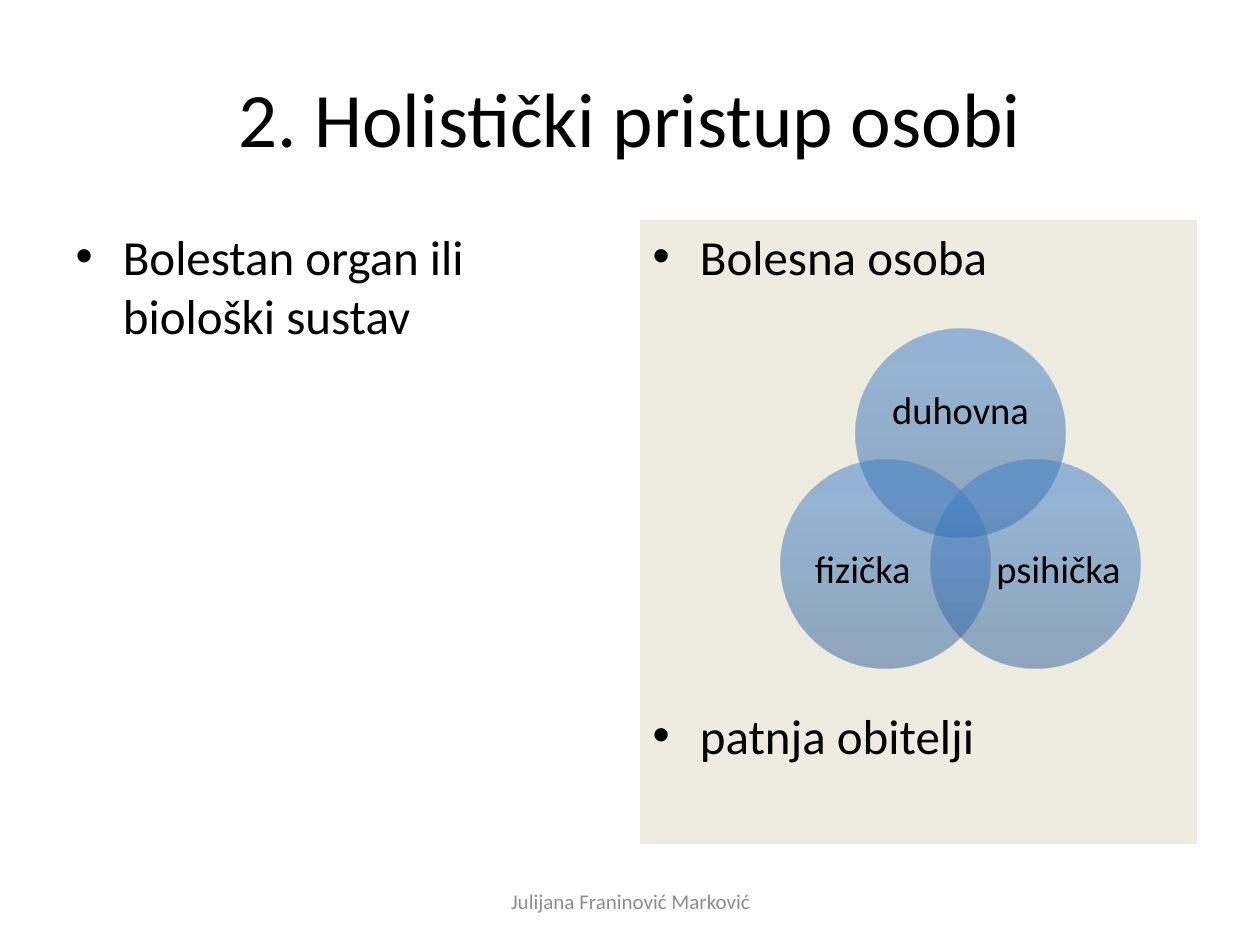
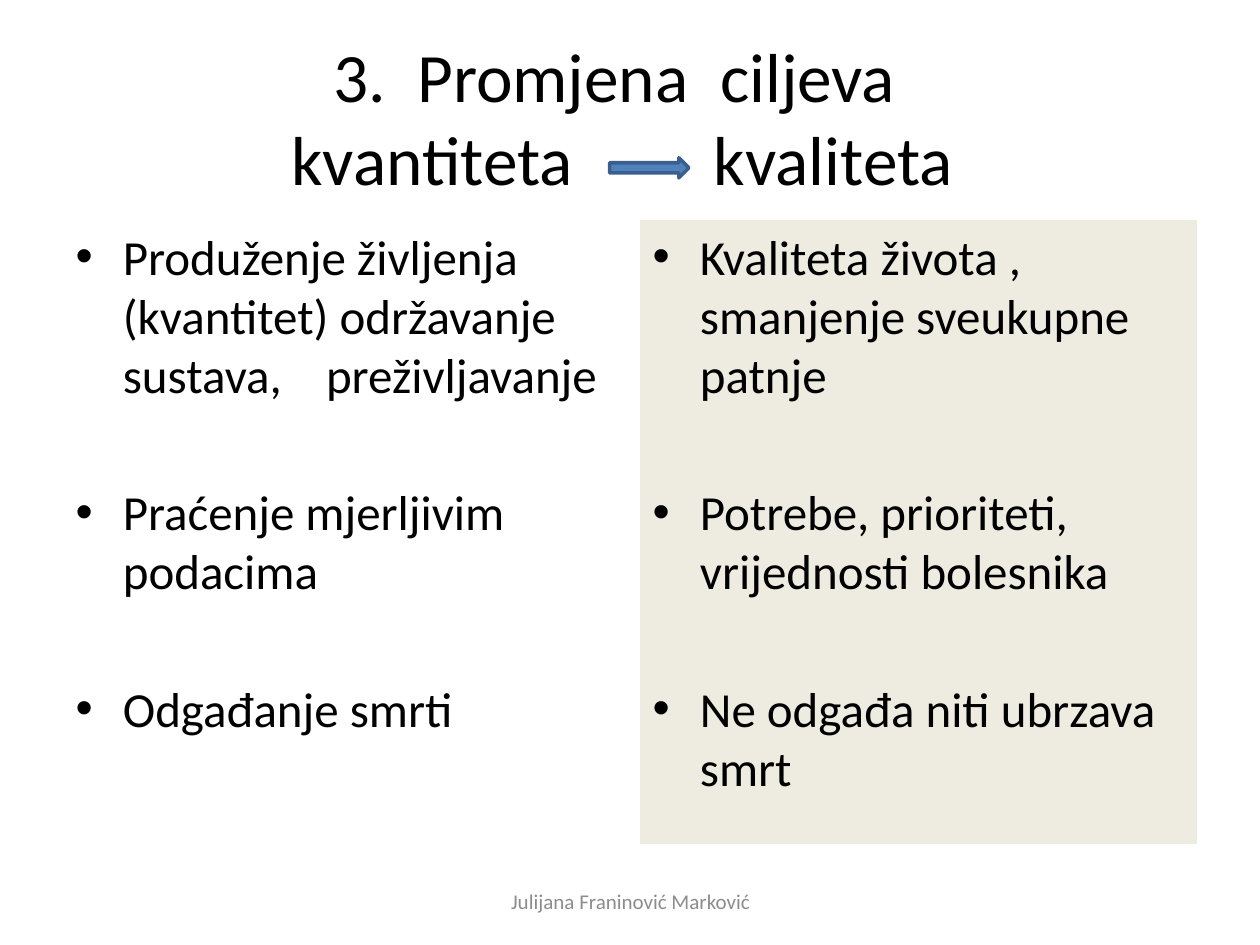
from dataclasses import dataclass

from lxml import etree
from pptx import Presentation
from pptx import util as u
from pptx.dml.color import RGBColor
from pptx.enum import shapes, text
from pptx.oxml import ns

FONT = "Calibri"
BLACK = RGBColor(0x00, 0x00, 0x00)
WHITE = RGBColor(0xFF, 0xFF, 0xFF)
GREY = RGBColor(0x8C, 0x8C, 0x8C)
PANEL = RGBColor(0xEE, 0xEC, 0xE1)
ARROW_FILL = RGBColor(0x4F, 0x81, 0xBD)
ARROW_LINE = RGBColor(0x3A, 0x5F, 0x8C)
CIRCLE_STOPS = (
    (0, RGBColor(0x2F, 0x5F, 0x99)),
    (80, RGBColor(0x3D, 0x7C, 0xC7)),
    (100, RGBColor(0x3A, 0x7C, 0xCB)),
)
SPACE_WIDTH = 0.226  # width of a space, as a share of the font size
BODY_SIZE = 28
BULLET_GAP = 45  # points between bullets that stand apart


@dataclass
class Box:
    left: float
    top: float
    width: float
    height: float

    def share(self, x, y, width, height):
        """Box inside this one, given as shares of its size."""
        return Box(self.left + x * self.width, self.top + y * self.height,
                   width * self.width, height * self.height)

    def emu(self):
        return [u.Inches(n) for n in (self.left, self.top, self.width, self.height)]


SLIDE = Box(0, 0, 10, 7.5)
TITLE = SLIDE.share(0.05, 0.04, 0.9, 0.167)
LEFT = SLIDE.share(0.05, 0.233, 0.442, 0.66)
RIGHT = SLIDE.share(0.508, 0.233, 0.442, 0.66)
FOOTER = SLIDE.share(0.342, 0.927, 0.317, 0.053)


def add_span(para, words, size, color=BLACK):
    span = para.add_run()
    span.text = words
    span.font.name = FONT
    span.font.size = u.Pt(size)
    span.font.color.rgb = color
    return span


def add_pieces(para, pieces, size):
    """Strings become runs; a number is a gap that many spaces wide."""
    for piece in pieces:
        if piece == "\n":
            para.add_line_break()
        elif isinstance(piece, str):
            add_span(para, piece, size)
        else:
            gap = add_span(para, " ", size)
            extra = (piece - 1) * SPACE_WIDTH * size
            gap.font._element.set("spc", str(round(extra * 100)))


def place(holder, box):
    holder.left, holder.top, holder.width, holder.height = box.emu()
    holder.text_frame.auto_size = text.MSO_AUTO_SIZE.NONE
    return holder.text_frame


def fill_title(page, box, pieces, size):
    frame = place(page.shapes.title, box)
    frame.vertical_anchor = text.MSO_ANCHOR.MIDDLE
    para = frame.paragraphs[0]
    para.alignment = text.PP_ALIGN.CENTER
    add_pieces(para, pieces, size)


def fill_list(holder, box, bullets, gap=BULLET_GAP, fill=None):
    frame = place(holder, box)
    if fill is not None:
        holder.fill.solid()
        holder.fill.fore_color.rgb = fill
    for number, pieces in enumerate(bullets):
        para = frame.add_paragraph() if number else frame.paragraphs[0]
        if number:
            para.space_before = u.Pt(gap)
        add_pieces(para, pieces, BODY_SIZE)


def add_label(page, box, words, size, color=BLACK, spacing=1.0):
    frame = page.shapes.add_textbox(*box.emu()).text_frame
    frame.margin_left = frame.margin_right = 0
    frame.margin_top = frame.margin_bottom = 0
    frame.word_wrap = False
    frame.vertical_anchor = text.MSO_ANCHOR.MIDDLE
    para = frame.paragraphs[0]
    para.alignment = text.PP_ALIGN.CENTER
    para.line_spacing = spacing
    add_span(para, words, size, color)


def add_circle(page, box):
    circle = page.shapes.add_shape(shapes.MSO_SHAPE.OVAL, *box.emu())
    circle.shadow.inherit = False
    circle.line.fill.background()
    circle.fill.gradient()
    circle.fill.gradient_angle = 90
    # Three half-transparent stops
    stops = circle._element.spPr.find(".//" + ns.qn("a:gsLst"))
    for old in list(stops):
        stops.remove(old)
    for position, color in CIRCLE_STOPS:
        stop = etree.SubElement(stops, ns.qn("a:gs"), pos=str(position * 1000))
        tint = etree.SubElement(stop, ns.qn("a:srgbClr"), val=str(color))
        etree.SubElement(tint, ns.qn("a:alpha"), val="50000")


def add_venn(page, box):
    """Three overlapping circles, each with a label in its free area."""
    wide, high = 0.583, 0.615
    low_label = (0.26, 0.6, 0.55)
    circles = (
        ("duhovna", (1 - wide) / 2, 0, (0.13, 0.175, 0.74, 0.45)),
        ("psihička", 1 - wide, 1 - high, (0.31, *low_label)),
        ("fizička", 0, 1 - high, (0.09, *low_label)),
    )
    for words, x, y, label in circles:
        circle = box.share(x, y, wide, high)
        add_circle(page, circle)
        add_label(page, circle.share(*label), words, 22, spacing=0.9)


def add_title_arrow(page, box):
    arrow = page.shapes.add_shape(shapes.MSO_SHAPE.RIGHT_ARROW, *box.emu())
    arrow.shadow.inherit = False
    arrow.fill.solid()
    arrow.fill.fore_color.rgb = ARROW_FILL
    arrow.line.color.rgb = ARROW_LINE
    arrow.line.width = u.Pt(2)


def add_comparison(deck, title, title_size, left, right, gap=BULLET_GAP):
    """Slide with a title, a plain list, a shaded list and the footer."""
    page = deck.slides.add_slide(deck.slide_layouts[3])
    page.background.fill.solid()
    page.background.fill.fore_color.rgb = WHITE
    fill_title(page, TITLE, title, title_size)
    fill_list(page.placeholders[1], LEFT, left)
    fill_list(page.placeholders[2], RIGHT, right, gap, PANEL)
    add_label(page, FOOTER, "Julijana Franinović Marković", 12, GREY)
    return page


def main():
    deck = Presentation()
    deck.slide_width = u.Inches(SLIDE.width)
    deck.slide_height = u.Inches(SLIDE.height)

    # Holistic approach; the wide gap leaves room for the circles
    page = add_comparison(
        deck, ["2. Holistički pristup osobi"], 44,
        [["Bolestan organ ili biološki sustav"]],
        [["Bolesna osoba"], ["patnja obitelji"]], gap=240)
    add_venn(page, RIGHT.share(0.253, 0.174, 0.645, 0.545))

    # Change of goals
    page = add_comparison(
        deck,
        ["3.", 2, "Promjena", 2, "ciljeva", 2, "\n",
         "kvantiteta", 9, "kvaliteta", 1], 39.6,
        [["Produženje življenja (kvantitet) održavanje sustava,", 4,
          "preživljavanje"],
         ["Praćenje mjerljivim podacima"],
         ["Odgađanje smrti"]],
        [["Kvaliteta života , smanjenje sveukupne patnje"],
         ["Potrebe, prioriteti, vrijednosti bolesnika"],
         ["Ne odgađa niti ubrzava smrt"]])
    add_title_arrow(page, TITLE.share(0.482, 0.76, 0.07, 0.128))

    deck.save("out.pptx")


if __name__ == "__main__":
    main()
